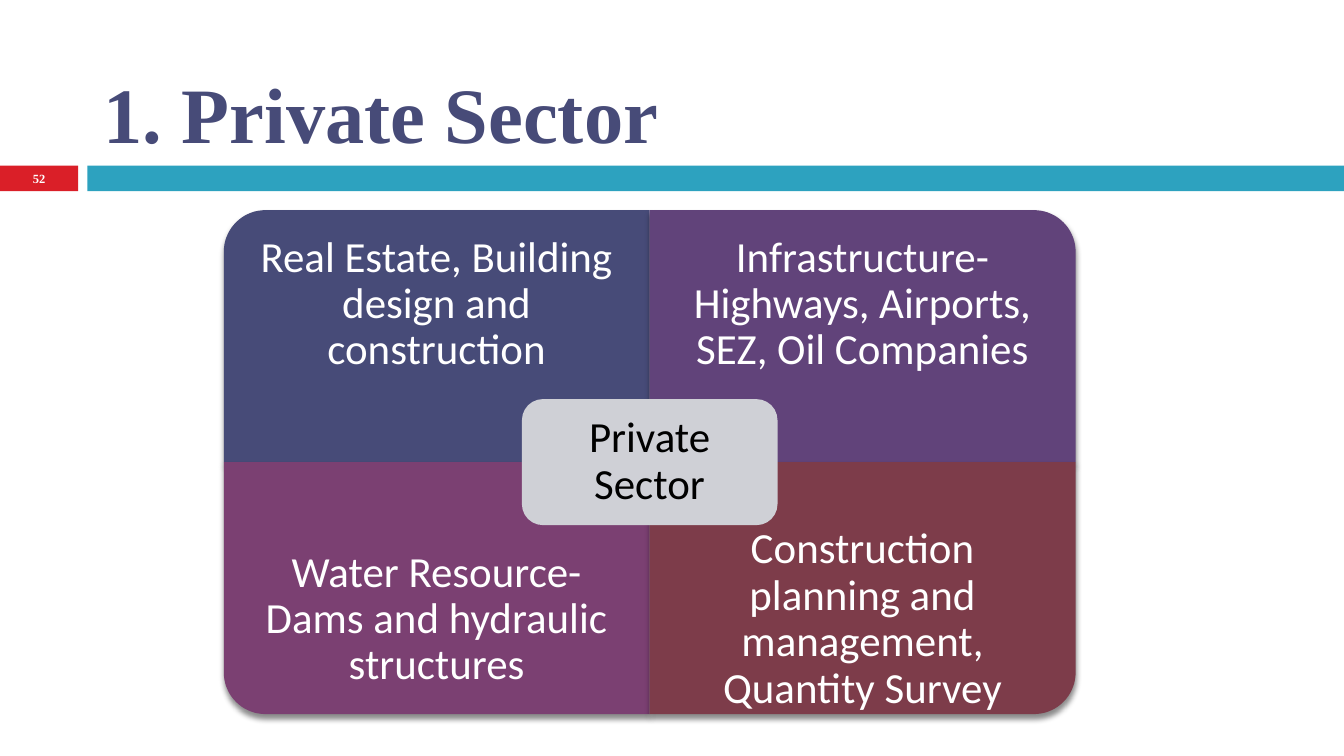
import math

import pptx
import pptx.dml.color
import pptx.enum.shapes
import pptx.enum.text
import pptx.oxml
import pptx.oxml.ns
import pptx.util

Cm = pptx.util.Cm
Pt = pptx.util.Pt
ALIGN = pptx.enum.text.PP_ALIGN
ANCHOR = pptx.enum.text.MSO_ANCHOR
SHAPE = pptx.enum.shapes.MSO_SHAPE

COLORS = {
    "navy": "474B78",
    "violet": "61437A",
    "plum": "7B4072",
    "maroon": "7D3C4A",
    "grey": "CFD0D6",
    "red": "DA1F28",
    "teal": "2DA2BF",
    "white": "FFFFFF",
    "black": "000000",
}

CENTER_X, CENTER_Y = 12.28, 8.73
QUADRANT_W, QUADRANT_H = 8.05, 4.76
CORNER_RADIUS = 0.79
HUB_W, HUB_H = 4.83, 2.38

# Text, colour, horizontal and vertical direction from the centre
QUADRANTS = [
    ("Real Estate, Building design and construction", "navy", -1, -1),
    ("Infrastructure- Highways, Airports, SEZ, Oil Companies", "violet", 1, -1),
    ("Water Resource- Dams and hydraulic structures", "plum", -1, 1),
    ("Construction planning and management, Quantity Survey", "maroon", 1, 1),
]


def rgb(name):
    return pptx.dml.color.RGBColor.from_string(COLORS[name])


def paint(shape, color):
    """Give a flat fill with no outline and no shadow."""
    shape.shadow.inherit = False
    shape.fill.solid()
    shape.fill.fore_color.rgb = rgb(color)
    shape.line.fill.background()


def add_block(slide, kind, left, top, width, height, color):
    block = slide.shapes.add_shape(kind, Cm(left), Cm(top), Cm(width), Cm(height))
    paint(block, color)
    return block


def set_text(shape, text, font, size, color, bold=False,
             align=ALIGN.CENTER, anchor=ANCHOR.MIDDLE):
    frame = shape.text_frame
    frame.word_wrap = True
    frame.auto_size = pptx.enum.text.MSO_AUTO_SIZE.NONE
    frame.vertical_anchor = anchor
    frame.text = text
    paragraph = frame.paragraphs[0]
    paragraph.alignment = align
    run_font = paragraph.runs[0].font
    run_font.name, run_font.size, run_font.bold = font, Pt(size), bold
    run_font.color.rgb = rgb(color)


def set_diagram_text(shape, text, color, side, top, bottom):
    set_text(shape, text, "Calibri", 23, color)
    frame = shape.text_frame
    frame.margin_left = frame.margin_right = Cm(side)
    frame.margin_top, frame.margin_bottom = Cm(top), Cm(bottom)
    frame.paragraphs[0].line_spacing = 0.9


def add_soft_shadow(shape):
    effects = shape.element.spPr.find(pptx.oxml.ns.qn("a:effectLst"))
    effects.append(pptx.oxml.parse_xml(
        f'<a:outerShdw {pptx.oxml.ns.nsdecls("a")} blurRad="{Pt(3)}" '
        f'dist="{Pt(2.4)}" dir="5400000" rotWithShape="0">'
        f'<a:srgbClr val="{COLORS["black"]}"><a:alpha val="45000"/></a:srgbClr>'
        '</a:outerShdw>'))


def add_quadrant(slide, text, color, x_dir, y_dir):
    """Draw a quarter of the matrix, rounded at its outer corner."""
    def point(x, y):
        return Cm(CENTER_X + x_dir * x), Cm(CENTER_Y + y_dir * y)

    arc = []
    for degrees in range(0, 91, 5):
        angle = math.radians(degrees)
        arc.append(point(
            QUADRANT_W - CORNER_RADIUS * (1 - math.cos(angle)),
            QUADRANT_H - CORNER_RADIUS * (1 - math.sin(angle))))
    builder = slide.shapes.build_freeform(*point(0, 0))
    builder.add_line_segments([point(QUADRANT_W, 0), *arc, point(0, QUADRANT_H)])
    quadrant = builder.convert_to_shape()
    paint(quadrant, color)
    add_soft_shadow(quadrant)
    top, bottom = (0.46, 1.65) if y_dir < 0 else (1.65, 0.46)
    set_diagram_text(quadrant, text, "white", 0.46, top, bottom)


def add_hub(slide, text):
    hub = add_block(slide, SHAPE.ROUNDED_RECTANGLE, CENTER_X - HUB_W / 2,
                    CENTER_Y - HUB_H / 2, HUB_W, HUB_H, "grey")
    set_diagram_text(hub, text, "black", 0.36, 0.36, 0.36)


def add_title(slide, text):
    title = slide.shapes.title
    title.left, title.top = Cm(1.7), Cm(0.33)
    title.width, title.height = Cm(22.66), Cm(2.8)
    set_text(title, text, "Times New Roman", 42, "navy", True,
             ALIGN.LEFT, ANCHOR.BOTTOM)


def add_page_number(slide, number):
    page = slide.shapes.add_textbox(Cm(0), Cm(3.13), Cm(1.48), Cm(0.5))
    set_text(page, number, "Times New Roman", 6.7, "white", True)


def main():
    deck = pptx.Presentation()
    deck.slide_width, deck.slide_height = Cm(25.4), Cm(14.28)
    slide = deck.slides.add_slide(deck.slide_layouts[5])
    add_block(slide, SHAPE.RECTANGLE, 0, 3.13, 1.48, 0.48, "red")
    add_block(slide, SHAPE.RECTANGLE, 1.65, 3.13, 23.75, 0.48, "teal")
    add_title(slide, "1. Private Sector")
    for quadrant in QUADRANTS:
        add_quadrant(slide, *quadrant)
    add_hub(slide, "Private Sector")
    add_page_number(slide, "52")
    deck.save("out.pptx")


if __name__ == "__main__":
    main()
